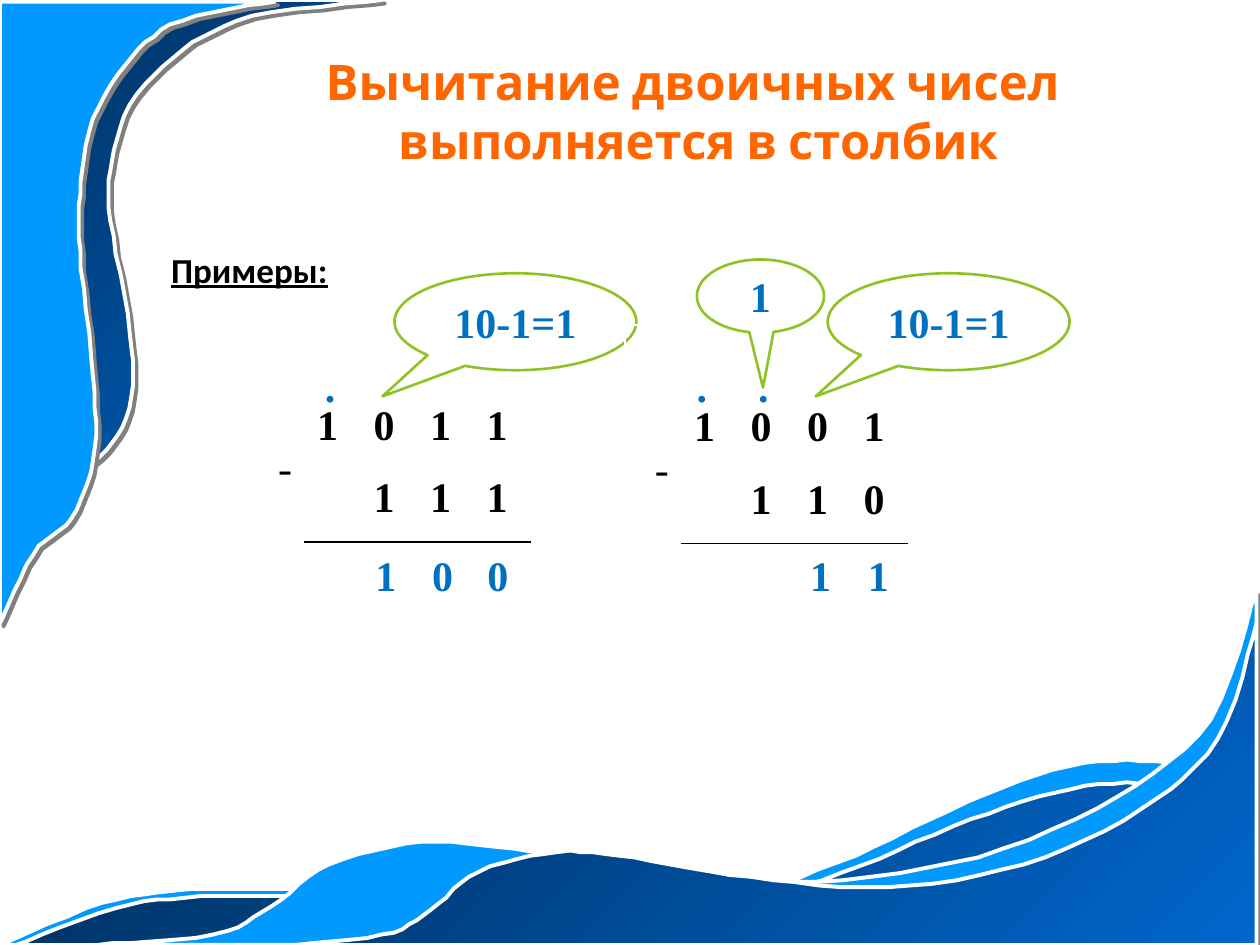
from pptx import Presentation
from pptx.dml.color import RGBColor
from pptx.enum import shapes, text
from pptx.oxml import parse_xml
from pptx.oxml.ns import nsdecls, qn
from pptx.util import Pt

SERIF = "Times New Roman"
BLACK, BLUE, GREEN, ORANGE = "000000", "0070C0", "90C226", "FF6600"
WHITE, GREY = "FFFFFF", "808080"
SKY, DEEP = ["0099FF"], ["002F5E", "0066CC"]  # two colours make a gradient

TITLE = ["Вычитание двоичных чисел ", "выполняется в столбик"]

# Curved edges, in percent of the box that a wave fills; the corner closes the outline
CORNER_EDGE = [(0, 100), (12, 89), (26, 83), (34, 74), (34, 60), (29, 40),
               (29, 31), (34, 19), (48, 9), (66, 3), (100, 0), (0, 0)]
RIPPLE_EDGE = [(0, 100), (8, 77), (15, 70), (25, 70), (40, 77), (50, 80),
               (59, 73), (68, 51), (77, 22), (85, 3), (92, 0), (100, 10), (100, 100)]
SWELL_EDGE = [(0, 100), (10, 97), (15, 89), (20, 77), (28, 71), (36, 73), (48, 79),
              (62, 82), (76, 75), (88, 58), (96, 36), (100, 0), (100, 100)]
WAVES = [
    (CORNER_EDGE, DEEP, (0, 0, 218, 315)),
    (CORNER_EDGE, SKY, (0, 1, 157, 355)),
    (RIPPLE_EDGE, SKY, (1, 435, 717, 105)),
    (RIPPLE_EDGE, DEEP, (9, 448, 709, 92)),
    (SWELL_EDGE, SKY, (56, 338, 662, 202)),
    (SWELL_EDGE, DEEP, (163, 356, 555, 184)),
]

# dots and result: (text, left); callouts: (text, left, top, width, height, tail)
EXAMPLES = [
    {"at": (141.8, 185), "rows": ["1011", " 111"],
     "dots": [(".", 178.6)],
     "result": [("1", 207.4), ("0", 239.8), ("0", 271.4)],
     "callouts": [("10-1=1", 225.4, 156.2, 138.2, 55.4, (-0.55, 0.77))]},
    {"at": (357.1, 185.8), "rows": ["1001", " 110"],
     "dots": [(".", 391), (".", 426.2)],
     "result": [("1", 455.8), ("1", 488.9)],
     "callouts": [("10-1=1", 473, 156.2, 138.2, 55.4, (-0.55, 0.77)),
                  ("1", 398.2, 148.3, 72.7, 41.8, (0.02, 1.25))]},
]
COL_W, ROW_H = 32.3, 41.6
DOT_TOP, RESULT_TOP = 202.3, 310.3


def rgb(colour):
    return RGBColor.from_string(colour)


def add_run(p, words, size=24, font=SERIF, colour=BLUE, bold=True, underline=None):
    r = p.add_run()
    r.text = words
    f = r.font
    f.size, f.name, f.bold, f.underline = Pt(size), font, bold, underline
    f.color.rgb = rgb(colour)


def smooth(points, steps=6):
    """Catmull-Rom curve through the points."""
    padded = [points[0], *points, points[-1]]
    curve = [points[0]]
    for quad in zip(padded, padded[1:], padded[2:], padded[3:]):
        for t in (i / steps for i in range(1, steps + 1)):
            curve.append(tuple(
                0.5 * (2 * b + (c - a) * t + (2 * a - 5 * b + 4 * c - d) * t ** 2
                       + (3 * b - a - 3 * c + d) * t ** 3)
                for a, b, c, d in zip(*quad)))
    return curve


def add_wave(s, edge, colours, box):
    left, top, width, height = box
    outline = [(left + x * width / 100, top + y * height / 100)
               for x, y in smooth(edge[:-1]) + edge[-1:]]
    builder = s.shapes.build_freeform(*outline[0], scale=Pt(1))
    builder.add_line_segments(outline[1:], close=True)
    sp = builder.convert_to_shape()
    if len(colours) == 2:
        sp.fill.gradient()
        sp.fill.gradient_angle = 315
        for stop, colour in zip(sp.fill.gradient_stops, colours):
            stop.color.rgb = rgb(colour)
    else:
        sp.fill.solid()
        sp.fill.fore_color.rgb = rgb(colours[0])
    sp.line.color.rgb, sp.line.width = rgb(WHITE), Pt(2.25)
    sp.shadow.inherit = False
    sp._element.spPr.find(qn("a:effectLst")).append(parse_xml(
        f'<a:outerShdw {nsdecls("a")} dist="{Pt(2.8)}" dir="2700000" algn="ctr" rotWithShape="0">'
        f'<a:srgbClr val="{GREY}"/></a:outerShdw>'))


def add_text(s, words, left, top, width=23.8, height=36, wrap=True, **style):
    tf = s.shapes.add_textbox(Pt(left), Pt(top), Pt(width), Pt(height)).text_frame
    tf.word_wrap = wrap
    add_run(tf.paragraphs[0], words, **style)


def add_callout(s, words, left, top, width, height, tail):
    sp = s.shapes.add_shape(shapes.MSO_SHAPE.OVAL_CALLOUT, Pt(left), Pt(top), Pt(width), Pt(height))
    sp.adjustments[0], sp.adjustments[1] = tail
    sp.shadow.inherit = False
    sp.fill.background()
    sp.line.color.rgb, sp.line.width = rgb(GREEN), Pt(1.5)
    sp.text_frame.vertical_anchor = text.MSO_ANCHOR.MIDDLE
    p = sp.text_frame.paragraphs[0]
    p.alignment = text.PP_ALIGN.CENTER
    add_run(p, words)


def add_bottom_border(cell):
    cell._tc.get_or_add_tcPr().insert(0, parse_xml(
        f'<a:lnB {nsdecls("a")} w="{Pt(1)}"><a:solidFill><a:srgbClr val="{BLACK}"/></a:solidFill></a:lnB>'))


def add_subtraction(s, left, top, rows):
    """Table with a blank first row, the minus sign on the left and one digit a cell."""
    table = s.shapes.add_table(3, 5, Pt(left), Pt(top), Pt(5 * COL_W), Pt(3 * ROW_H)).table
    table.first_row = table.horz_banding = False
    for col in table.columns:
        col.width = Pt(COL_W)
    for row in table.rows:
        row.height = Pt(ROW_H)
    for cell in table.iter_cells():
        cell.fill.background()
    for i, digits in enumerate(rows, 1):
        for j, digit in enumerate(digits, 1):
            if digit.strip():
                add_run(table.cell(i, j).text_frame.paragraphs[0], digit, colour=BLACK)
    for j in range(1, 5):
        add_bottom_border(table.cell(2, j))
    minus = table.cell(1, 0)
    minus.merge(table.cell(2, 0))
    minus.vertical_anchor = text.MSO_ANCHOR.MIDDLE
    p = minus.text_frame.paragraphs[0]
    p.alignment = text.PP_ALIGN.RIGHT
    add_run(p, "-", colour=BLACK, bold=False)


def add_title(s):
    title = s.shapes.title
    title.left, title.top, title.width, title.height = Pt(157), Pt(25.9), Pt(483.8), Pt(74.9)
    tf = title.text_frame
    tf.word_wrap = False
    tf.vertical_anchor = text.MSO_ANCHOR.TOP
    p = tf.paragraphs[0]
    p.alignment = text.PP_ALIGN.CENTER
    for i, line in enumerate(TITLE):
        if i:
            p.add_line_break()
        add_run(p, line, size=28, font="Cabin", colour=ORANGE)


def main():
    prs = Presentation()
    prs.slide_width, prs.slide_height = Pt(720), Pt(540)
    s = prs.slides.add_slide(prs.slide_layouts[5])
    add_title(s)
    for wave in WAVES:
        add_wave(s, *wave)
    add_text(s, "Примеры:", 90.7, 138.2, 104.4, 31.7, wrap=False,
             size=20, font="Calibri", colour=BLACK, underline=True)
    for example in EXAMPLES:
        add_subtraction(s, *example["at"], example["rows"])
        for top, marks in ((DOT_TOP, example["dots"]), (RESULT_TOP, example["result"])):
            for words, left in marks:
                add_text(s, words, left, top)
        for callout in example["callouts"]:
            add_callout(s, *callout)
    prs.save("out.pptx")


if __name__ == "__main__":
    main()
